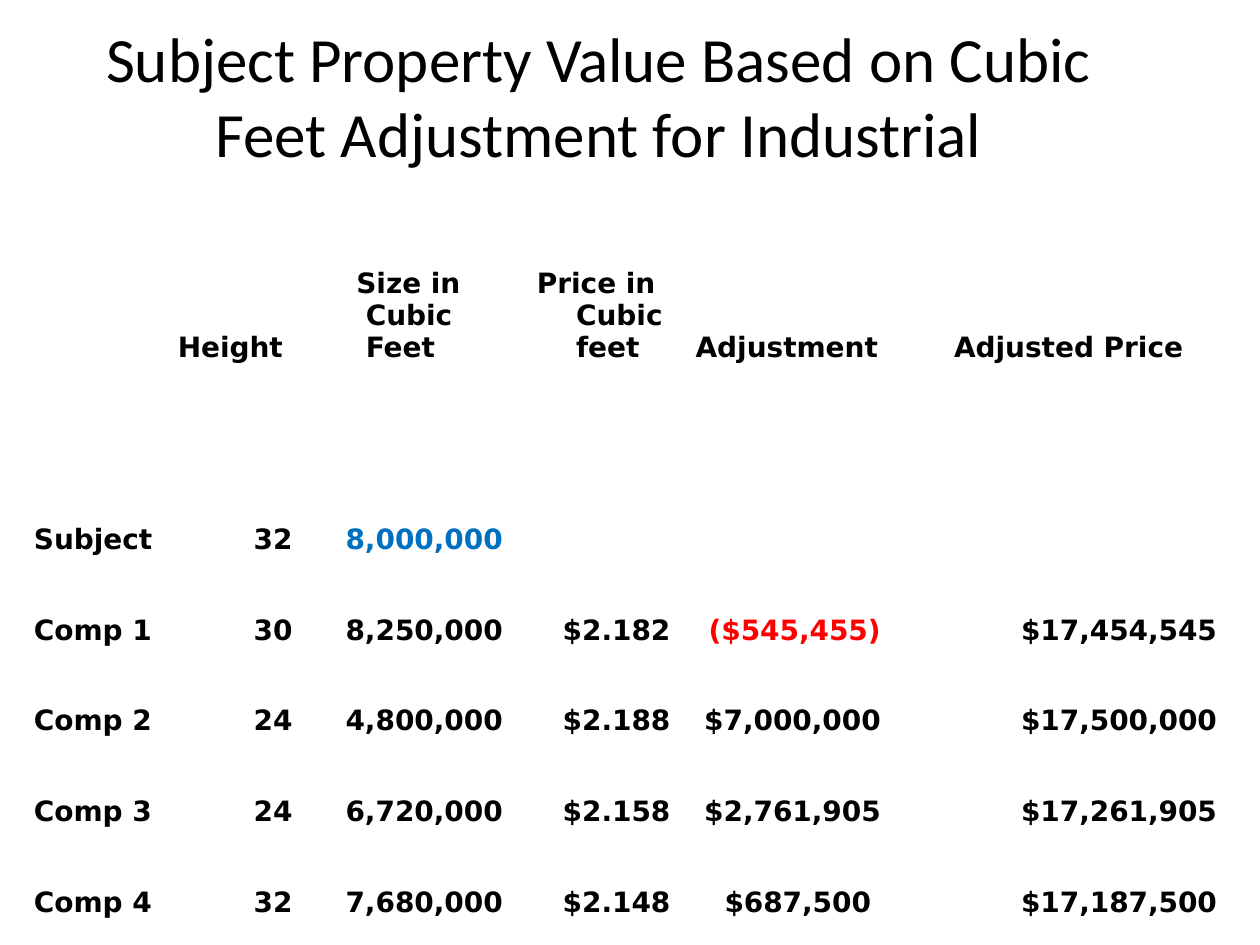
from typing import NamedTuple

from pptx import Presentation
from pptx.dml.color import RGBColor
from pptx.enum.text import MSO_ANCHOR as Anchor, PP_ALIGN as Align
from pptx.util import Cm, Pt

BLACK = RGBColor(0x00, 0x00, 0x00)
BLUE = RGBColor(0x00, 0x70, 0xC0)
RED = RGBColor(0xFF, 0x00, 0x00)
HANG = Cm(0.97)


class Item(NamedTuple):
    text: str
    color: RGBColor = BLACK
    first: Cm = Cm(0)  # where the first line starts


COLS = [2.9, 2.82, 4.24, 3.38, 4.24, 6.78]
ROWS = [3.86, 3.86] + [1.83] * 4

HEAD = [
    Item(""),
    Item("Height"),
    Item("Size in Cubic Feet", first=Cm(0.78)),
    Item("Price in Cubic feet", first=Cm(0.18)),
    Item("Adjustment"),
    Item("Adjusted Price", first=HANG),
]
BODY = [
    ["Subject", "32", Item("8,000,000", BLUE), "", "", ""],
    ["Comp 1", "30", "8,250,000", "$2.182", Item("($545,455)", RED), "$17,454,545"],
    ["Comp 2", "24", "4,800,000", "$2.188", "$7,000,000 ", "$17,500,000"],
    ["Comp 3", "24", "6,720,000", "$2.158", "$2,761,905 ", "$17,261,905"],
    ["Comp 4", "32", "7,680,000", "$2.148", "$687,500 ", "$17,187,500"],
]


def style(para, size: int, face: str, color: RGBColor, bold: bool = False) -> None:
    for run in para.runs:
        font = run.font
        font.size, font.name, font.bold = Pt(size), face, bold
        font.color.rgb = color


def add_title(slide, text: str) -> None:
    box = slide.shapes.add_textbox(Cm(0.64), Cm(0.64), Cm(22.86), Cm(2.54))
    frame = box.text_frame
    frame.word_wrap = True
    frame.vertical_anchor = Anchor.MIDDLE
    frame.text = text
    para = frame.paragraphs[0]
    para.alignment = Align.CENTER
    style(para, 36, "Calibri", BLACK)


def fill_cell(cell, item: Item, align: Align) -> None:
    cell.fill.background()
    cell.vertical_anchor = Anchor.BOTTOM
    cell.text_frame.text = item.text
    para = cell.text_frame.paragraphs[0]
    para.alignment = align
    # Hanging indent
    props = para._p.get_or_add_pPr()
    props.set("marL", str(int(HANG)))
    props.set("indent", str(int(item.first - HANG)))
    style(para, 16, "DejaVu Sans", item.color, bold=True)


def add_grid(slide) -> None:
    frame = slide.shapes.add_table(
        len(ROWS), len(COLS), Cm(0.43), Cm(3.61), Cm(sum(COLS)), Cm(sum(ROWS))
    )
    table = frame.table
    table.first_row = table.horz_banding = False
    for col, width in zip(table.columns, COLS):
        col.width = Cm(width)
    for row, height in zip(table.rows, ROWS):
        row.height = Cm(height)

    # Labels sit left, figures sit right
    for r, line in enumerate([HEAD] + BODY):
        for c, value in enumerate(line):
            item = value if isinstance(value, Item) else Item(value)
            align = Align.RIGHT if r and c else Align.LEFT
            fill_cell(table.cell(r, c), item, align)


def main() -> None:
    deck = Presentation()
    deck.slide_width, deck.slide_height = Cm(25.4), Cm(19.05)
    slide = deck.slides.add_slide(deck.slide_layouts[6])
    add_title(slide, "Subject Property Value Based on Cubic Feet Adjustment for Industrial")
    add_grid(slide)
    deck.save("out.pptx")


if __name__ == "__main__":
    main()
